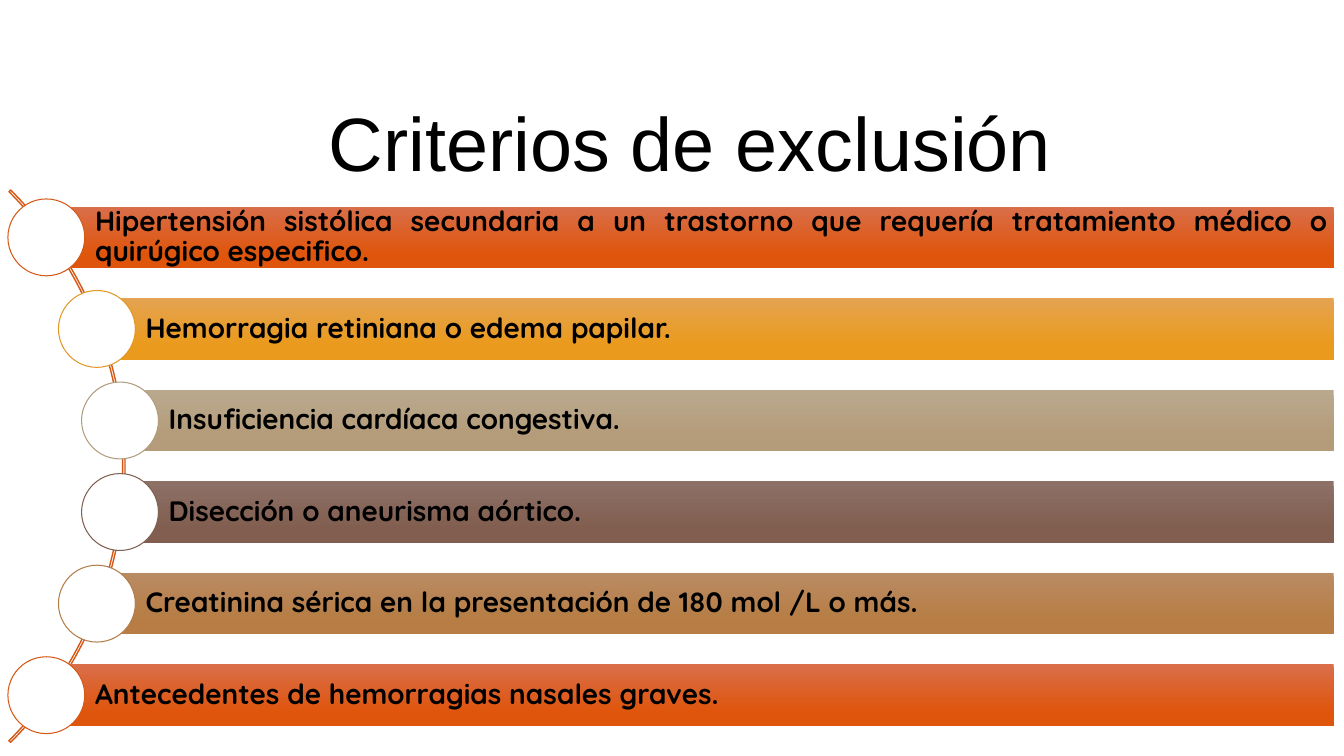
"""Build the slide listing the exclusion criteria along a curved spine."""
from pptx import Presentation
from pptx.dml.color import RGBColor
from pptx.enum import shapes, text
from pptx.util import Pt

BLACK = RGBColor(0x00, 0x00, 0x00)
WHITE = RGBColor(0xFF, 0xFF, 0xFF)
ORANGE = (RGBColor(0xD9, 0x6E, 0x4A), RGBColor(0xDF, 0x55, 0x0C), RGBColor(0xD5, 0x58, 0x16))
AMBER = (RGBColor(0xE4, 0xA3, 0x50), RGBColor(0xEA, 0x9A, 0x1C), RGBColor(0xE1, 0x98, 0x25))
SAND = (RGBColor(0xBA, 0xA8, 0x8D), RGBColor(0xB4, 0x9C, 0x7A), RGBColor(0xB1, 0x9C, 0x7D))
UMBER = (RGBColor(0x8D, 0x70, 0x66), RGBColor(0x81, 0x5E, 0x50), RGBColor(0x7F, 0x5F, 0x52))
COPPER = (RGBColor(0xB9, 0x8B, 0x63), RGBColor(0xB7, 0x7D, 0x44), RGBColor(0xB2, 0x7D, 0x49))

BAR_RIGHT, BAR_HEIGHT, FIRST_TOP, PITCH = 952.6, 43.9, 147.6, 65.4
DISC = 54.9
criteria = [
    ("Hipertensión sistólica secundaria a un trastorno que requería tratamiento médico o "
     "quirúgico especifico.", 33.1, ORANGE),
    ("Hemorragia retiniana o edema papilar.", 69.2, AMBER),
    ("Insuficiencia cardíaca congestiva.", 85.7, SAND),
    ("Disección o aneurisma aórtico.", 85.7, UMBER),
    ("Creatinina sérica en la presentación de 180 mol /L o más.", 69.2, COPPER),
    ("Antecedentes de hemorragias nasales graves.", 33.1, ORANGE),
]

deck = Presentation()
deck.slide_width, deck.slide_height = Pt(960), Pt(540)
slide = deck.slides.add_slide(deck.slide_layouts[5])

title = slide.shapes.title
title.left, title.top, title.width, title.height = Pt(198.7), Pt(69.8), Pt(588.2), Pt(62.6)
title.text_frame.text = "Criterios de exclusión"
title.text_frame.auto_size = text.MSO_AUTO_SIZE.NONE
title.text_frame.vertical_anchor = text.MSO_ANCHOR.MIDDLE
heading = title.text_frame.paragraphs[0]
heading.alignment = text.PP_ALIGN.CENTER
heading_font = heading.runs[0].font
heading_font.name, heading_font.size = "Arial", Pt(54)
heading_font.color.rgb = BLACK

spine = slide.shapes.add_shape(
    shapes.MSO_SHAPE.BLOCK_ARC, Pt(-468.7), Pt(54), Pt(558), Pt(558))
for index, adjustment in enumerate((189, 27, 0.003)):
    spine.adjustments[index] = adjustment
spine.shadow.inherit = False
spine.fill.background()
spine.line.color.rgb = ORANGE[2]
spine.line.width = Pt(1)

for row, (criterion, left, (light, deep, outline)) in enumerate(criteria):
    top = FIRST_TOP + row * PITCH
    bar = slide.shapes.add_shape(
        shapes.MSO_SHAPE.RECTANGLE, Pt(left), Pt(top), Pt(BAR_RIGHT - left), Pt(BAR_HEIGHT))
    bar.shadow.inherit = False
    bar.line.fill.background()
    bar.fill.gradient()
    bar.fill.gradient_angle = 270
    for stop, position, color in zip(bar.fill.gradient_stops, (0, 0.78), (light, deep)):
        stop.position = position
        stop.color.rgb = color

    frame = bar.text_frame
    frame.text = criterion
    frame.word_wrap = True
    frame.vertical_anchor = text.MSO_ANCHOR.MIDDLE
    frame.margin_left = Pt(34.8)
    frame.margin_top = frame.margin_right = frame.margin_bottom = Pt(4)
    paragraph = frame.paragraphs[0]
    paragraph.alignment = text.PP_ALIGN.JUSTIFY
    paragraph.line_spacing = 0.9
    font = paragraph.runs[0].font
    font.name, font.size, font.bold = "Quicksand", Pt(20), True
    font.color.rgb = BLACK

    disc = slide.shapes.add_shape(
        shapes.MSO_SHAPE.OVAL, Pt(left - DISC / 2), Pt(top + (BAR_HEIGHT - DISC) / 2),
        Pt(DISC), Pt(DISC))
    disc.shadow.inherit = False
    disc.fill.solid()
    disc.fill.fore_color.rgb = WHITE
    disc.line.color.rgb = outline
    disc.line.width = Pt(0.75)

deck.save("out.pptx")
